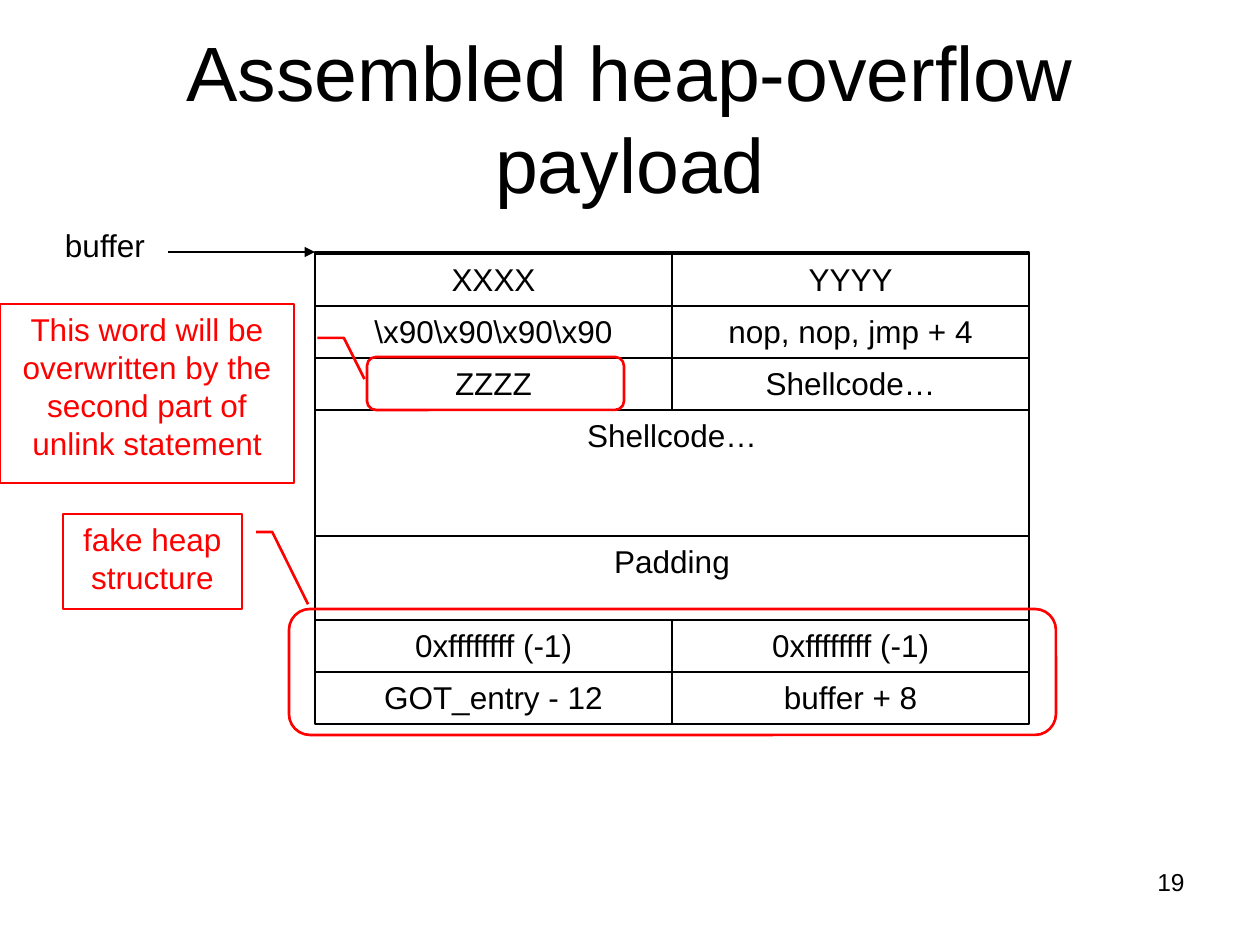
from pptx import Presentation, util as u
from pptx.dml.color import RGBColor
from pptx.enum import shapes, text
from pptx.oxml.ns import qn
from lxml import etree

BLACK, RED = "000000", "FF0000"
TITLE = "Assembled heap-overflow payload"
LEFT, HALF, ROW = 315, 357, 52
TOP_ROWS = [
    ("XXXX", "YYYY"),
    (r"\x90\x90\x90\x90", "nop, nop, jmp + 4"),
    ("ZZZZ", "Shellcode…"),
]
WIDE_ROWS = [("Shellcode…", 410, 126), ("Padding", 536, 84)]
BOTTOM_ROWS = [("0xffffffff (-1)", "0xffffffff (-1)"), ("GOT_entry - 12", "buffer + 8")]
LABELS = [
    ("buffer", (42, 220, 126, 50), 18, text.PP_ALIGN.CENTER),
    ("19", (903, 861, 294, 65), 14, text.PP_ALIGN.RIGHT),
]
HIGHLIGHTS = [(289, 609, 767, 126), (367, 357, 257, 53)]
CALLOUTS = [
    ("fake heap structure", (63, 514, 179, 95), (0.95, -0.37)),
    ("This word will be overwritten by the second part of unlink statement",
     (0, 304, 294, 179), (0.42, -0.24)),
]


def px(value):
    return u.Emu(round(value * 914400 / 126))


def color(value):
    return RGBColor.from_string(value)


def write(shape, words, size, hue=BLACK, align=text.PP_ALIGN.CENTER,
          anchor=text.MSO_ANCHOR.TOP):
    frame = shape.text_frame
    frame.text = words
    frame.word_wrap = True
    frame.auto_size = text.MSO_AUTO_SIZE.NONE
    frame.vertical_anchor = anchor
    para = frame.paragraphs[0]
    para.alignment = align
    font = para.runs[0].font
    font.name, font.size = "Arial", u.Pt(size)
    font.color.rgb = color(hue)


def outline(page, kind, place, hue=BLACK, width=0.75):
    shape = page.shapes.add_shape(kind, *map(px, place))
    shape.shadow.inherit = False
    shape.fill.background()
    shape.line.color.rgb = color(hue)
    shape.line.width = u.Pt(width)
    return shape


def add_cell(page, words, place):
    write(outline(page, shapes.MSO_SHAPE.RECTANGLE, place), words, 18)


def add_pairs(page, rows, top):
    for index, pair in enumerate(rows):
        for column, words in enumerate(pair):
            place = LEFT + column * HALF, top + index * ROW, HALF, ROW
            add_cell(page, words, place)


def add_arrow(page, start, end):
    arrow = page.shapes.add_connector(shapes.MSO_CONNECTOR.STRAIGHT, *map(px, start + end))
    arrow.line.color.rgb = color(BLACK)
    arrow.line.width = u.Pt(0.75)
    line = arrow.line._get_or_add_ln()
    etree.SubElement(line, qn("a:tailEnd"), type="triangle")
    etree.SubElement(arrow.element.spPr, qn("a:effectLst"))


def add_callout(page, words, place, tip):
    callout = outline(page, shapes.MSO_SHAPE.LINE_CALLOUT_2, place, RED, 1.5)
    for index, value in enumerate((0.19, -0.08, 0.19, -0.17) + tip):
        callout.adjustments[index] = value
    callout.element.spPr.find(qn("a:xfrm")).set("flipH", "1")
    write(callout, words, 18, RED)


def main():
    deck = Presentation()
    deck.slide_width, deck.slide_height = px(1260), px(945)
    page = deck.slides.add_slide(deck.slide_layouts[5])
    title = page.shapes.title
    title.left, title.top, title.width, title.height = map(px, (63, 38, 1134, 158))
    write(title, TITLE, 44, anchor=text.MSO_ANCHOR.MIDDLE)

    outline(page, shapes.MSO_SHAPE.RECTANGLE, (LEFT, 252, 2 * HALF, 368))
    add_pairs(page, TOP_ROWS, 254)
    for words, top, height in WIDE_ROWS:
        add_cell(page, words, (LEFT, top, 2 * HALF, height))
    add_pairs(page, BOTTOM_ROWS, 620)

    for words, place, size, align in LABELS:
        write(page.shapes.add_textbox(*map(px, place)), words, size, align=align)
    add_arrow(page, (168, 252), (LEFT, 252))
    for place in HIGHLIGHTS:
        outline(page, shapes.MSO_SHAPE.ROUNDED_RECTANGLE, place, RED, 1.5)
    for callout in CALLOUTS:
        add_callout(page, *callout)
    deck.save("out.pptx")


if __name__ == "__main__":
    main()
